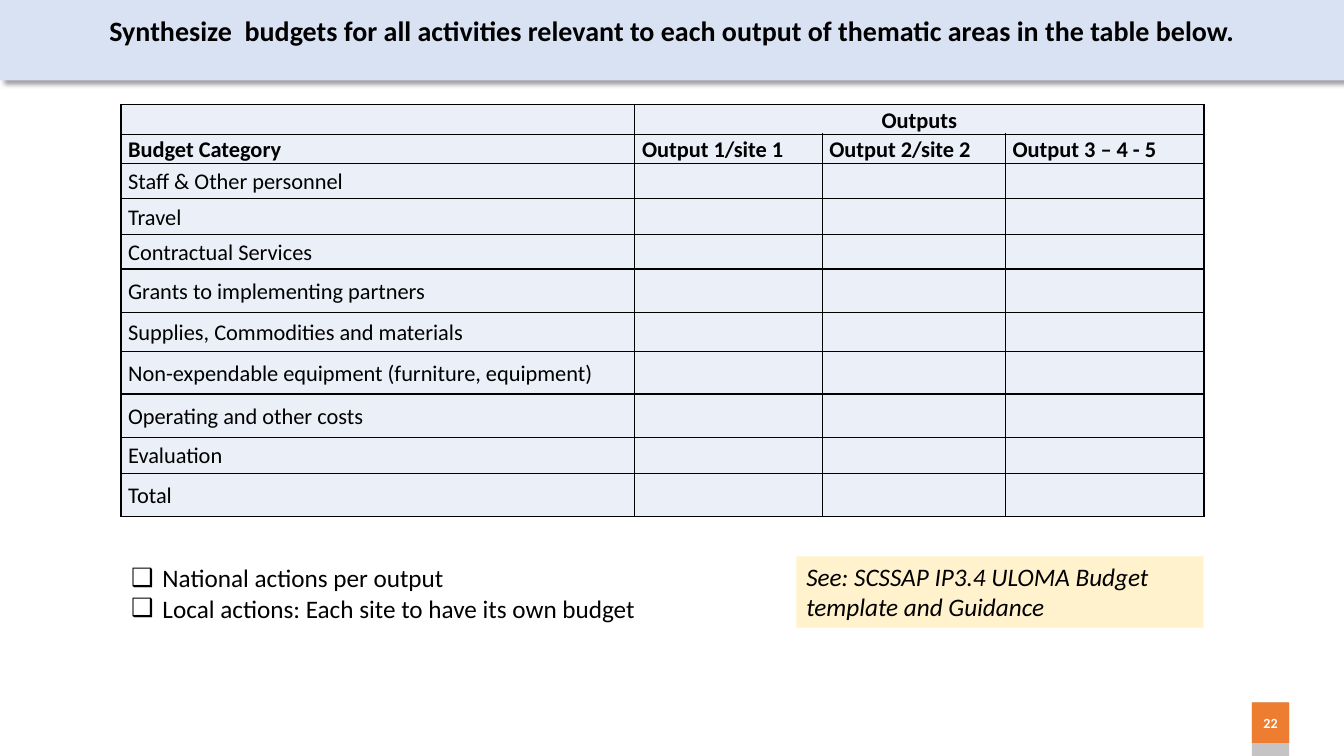
from dataclasses import dataclass

from lxml.etree import Element, SubElement
from pptx import Presentation
from pptx.dml.color import RGBColor
from pptx.enum.shapes import MSO_SHAPE
from pptx.enum.text import MSO_ANCHOR, MSO_AUTO_SIZE, PP_ALIGN
from pptx.oxml.ns import qn
from pptx.util import Cm, Pt

COLORS = {
    "text": "000000", "white": "FFFFFF", "cell": "DAE3F3", "band": "D9E2F3",
    "sky": "72D3F7", "blue": "ABC0E4", "pale": "C7D5ED",
    "note": "FFF2CC", "orange": "ED7D31", "grey": "C5C3C3",
}
FONT = "Calibri"
CELL_ALPHA = 56
COL_WIDTHS = [12.95, 4.72, 4.62, 5.0]
ROW_HEIGHTS = [0.69, 0.69, 0.89, 0.91, 0.86, 1.09, 0.99, 1.07, 1.09, 0.91, 1.09]
HEADINGS = ["Budget Category", "Output 1/site 1", "Output 2/site 2", "Output 3 – 4 - 5"]
CATEGORIES = [
    "Staff & Other personnel", "Travel", "Contractual Services",
    "Grants to implementing partners", "Supplies, Commodities and materials",
    "Non-expendable equipment (furniture, equipment)",
    "Operating and other costs", "Evaluation", "Total",
]
ACTIONS = ["National actions per output", "Local actions: Each site to have its own budget"]


@dataclass
class Box:
    left: float
    top: float
    width: float
    height: float
    fill: str = ""


BAND = Box(0, 0, 33.87, 2.03, "band")
TITLE = Box(0, 0, 33.87, 1.52)
LIST = Box(3.05, 14.05, 14.35, 1.8)
NOTE = Box(20.07, 14.02, 10.26, 1.8, "note")
TAB_SHADE = Box(31.55, 17.7, 0.94, 1.35, "grey")
TAB = Box(31.55, 17.7, 0.94, 1.02, "orange")


def rgb(name: str) -> RGBColor:
    return RGBColor.from_string(COLORS[name])


def place(sp, box: Box) -> None:
    sp.left, sp.top = Cm(box.left), Cm(box.top)
    sp.width, sp.height = Cm(box.width), Cm(box.height)


def add_rect(slide, box: Box):
    sp = slide.shapes.add_shape(MSO_SHAPE.RECTANGLE, Cm(box.left), Cm(box.top),
                                Cm(box.width), Cm(box.height))
    sp.fill.solid()
    sp.fill.fore_color.rgb = rgb(box.fill)
    sp.line.fill.background()
    sp.shadow.inherit = False
    return sp


def write(p, text: str, *, size: float, color: str = "text", bold: bool = False,
          italic: bool = False, align=PP_ALIGN.LEFT) -> None:
    p.alignment = align
    r = p.add_run()
    r.text = text
    r.font.name, r.font.size = FONT, Pt(size)
    r.font.bold, r.font.italic = bold, italic
    r.font.color.rgb = rgb(color)


def add_color(parent, name: str, alpha: int = 100) -> None:
    clr = SubElement(parent, qn("a:srgbClr"), val=COLORS[name])
    if alpha < 100:
        SubElement(clr, qn("a:alpha"), val=str(alpha * 1000))


def set_shadow(sp) -> None:
    effects = sp._element.spPr.find(qn("a:effectLst"))
    shadow = SubElement(effects, qn("a:outerShdw"), blurRad=str(Pt(4)), dist=str(Pt(3)),
                        dir="2700000", algn="tl", rotWithShape="0")
    add_color(shadow, "text", 40)


def set_gradient(sp, stops: list[tuple[int, str, int]]) -> None:
    sp.fill.gradient()
    sp.fill.gradient_angle = 270
    stop_list = sp._element.spPr.find(qn("a:gradFill")).find(qn("a:gsLst"))
    for stop in list(stop_list):
        stop_list.remove(stop)
    for pos, name, alpha in stops:
        add_color(SubElement(stop_list, qn("a:gs"), pos=str(pos * 1000)), name, alpha)


def set_bullet(p, char: str, indent: float) -> None:
    pPr = p._p.get_or_add_pPr()
    pPr.set("marL", str(Cm(indent)))
    pPr.set("indent", str(-Cm(indent)))
    SubElement(pPr, qn("a:buChar"), char=char)


def format_cell(cell) -> None:
    cell.margin_left = cell.margin_right = Cm(0.18)
    cell.margin_top = cell.margin_bottom = 0
    cell.vertical_anchor = MSO_ANCHOR.MIDDLE
    cell.fill.solid()
    cell.fill.fore_color.rgb = rgb("cell")
    tcPr = cell._tc.get_or_add_tcPr()
    clr = tcPr.find(qn("a:solidFill"))[0]
    SubElement(clr, qn("a:alpha"), val=str(CELL_ALPHA * 1000))
    for i, side in enumerate(("lnL", "lnR", "lnT", "lnB")):
        ln = Element(qn(f"a:{side}"), w=str(Pt(1)))
        add_color(SubElement(ln, qn("a:solidFill")), "text")
        tcPr.insert(i, ln)


def add_budget_table(slide) -> None:
    frame = slide.shapes.add_table(len(ROW_HEIGHTS), len(COL_WIDTHS), Cm(3.05), Cm(2.64),
                                   Cm(sum(COL_WIDTHS)), Cm(sum(ROW_HEIGHTS)))
    table = frame.table
    table.first_row = table.horz_banding = False
    for col, width in zip(table.columns, COL_WIDTHS):
        col.width = Cm(width)
    for row, height in zip(table.rows, ROW_HEIGHTS):
        row.height = Cm(height)
    table.cell(0, 1).merge(table.cell(0, 3))

    rows = [["", "Outputs", "", ""], HEADINGS] + [[c, "", "", ""] for c in CATEGORIES]
    for i, texts in enumerate(rows):
        for j, text in enumerate(texts):
            cell = table.cell(i, j)
            format_cell(cell)
            p = cell.text_frame.paragraphs[0]
            if text:
                p.line_spacing, p.space_after = 1.07, Pt(8)
                write(p, text, size=16, bold=i < 2,
                      align=PP_ALIGN.CENTER if i == 0 else PP_ALIGN.LEFT)
            else:
                SubElement(p._p, qn("a:endParaRPr"), sz="1600")


def main() -> None:
    prs = Presentation()
    prs.slide_width, prs.slide_height = Cm(33.87), Cm(19.05)
    slide = prs.slides.add_slide(prs.slide_layouts[1])
    title, body = slide.placeholders[0], slide.placeholders[1]

    # Header band behind the title
    band = add_rect(slide, BAND)
    set_shadow(band)
    slide.shapes._spTree.insert(2, band._element)

    # Title
    place(title, TITLE)
    set_gradient(title, [(0, "sky", 100), (38, "blue", 100), (66, "blue", 56), (100, "pale", 100)])
    tf = title.text_frame
    tf.auto_size, tf.vertical_anchor = MSO_AUTO_SIZE.NONE, MSO_ANCHOR.MIDDLE
    write(tf.paragraphs[0],
          "Synthesize  budgets for all activities relevant to each output of thematic areas "
          "in the table below.", size=20, bold=True, align=PP_ALIGN.CENTER)

    # Budget table
    add_budget_table(slide)

    # Action list
    place(body, LIST)
    tf = body.text_frame
    tf.auto_size, tf.vertical_anchor = MSO_AUTO_SIZE.NONE, MSO_ANCHOR.TOP
    for i, action in enumerate(ACTIONS):
        p = tf.add_paragraph() if i else tf.paragraphs[0]
        p.space_before = Pt(0)
        write(p, action, size=18)
        set_bullet(p, "❑", 0.79)

    # Guidance note
    tf = add_rect(slide, NOTE).text_frame
    tf.word_wrap, tf.vertical_anchor = True, MSO_ANCHOR.TOP
    write(tf.paragraphs[0], "See: SCSSAP IP3.4 ULOMA Budget template and Guidance",
          size=18, italic=True)

    # Page number tab
    add_rect(slide, TAB_SHADE)
    tf = add_rect(slide, TAB).text_frame
    tf.margin_left = tf.margin_right = 0
    tf.vertical_anchor = MSO_ANCHOR.MIDDLE
    write(tf.paragraphs[0], "22", size=10, color="white", bold=True, align=PP_ALIGN.CENTER)

    prs.save("out.pptx")


if __name__ == "__main__":
    main()
